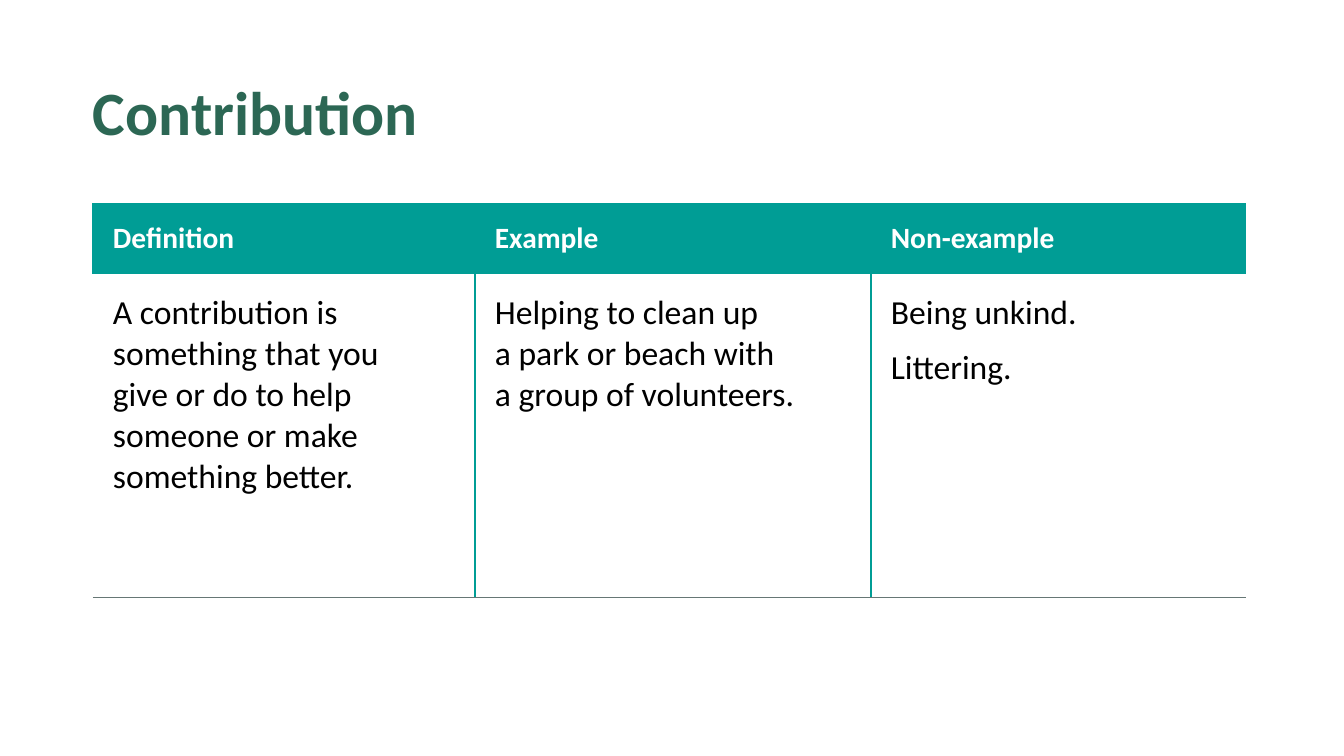
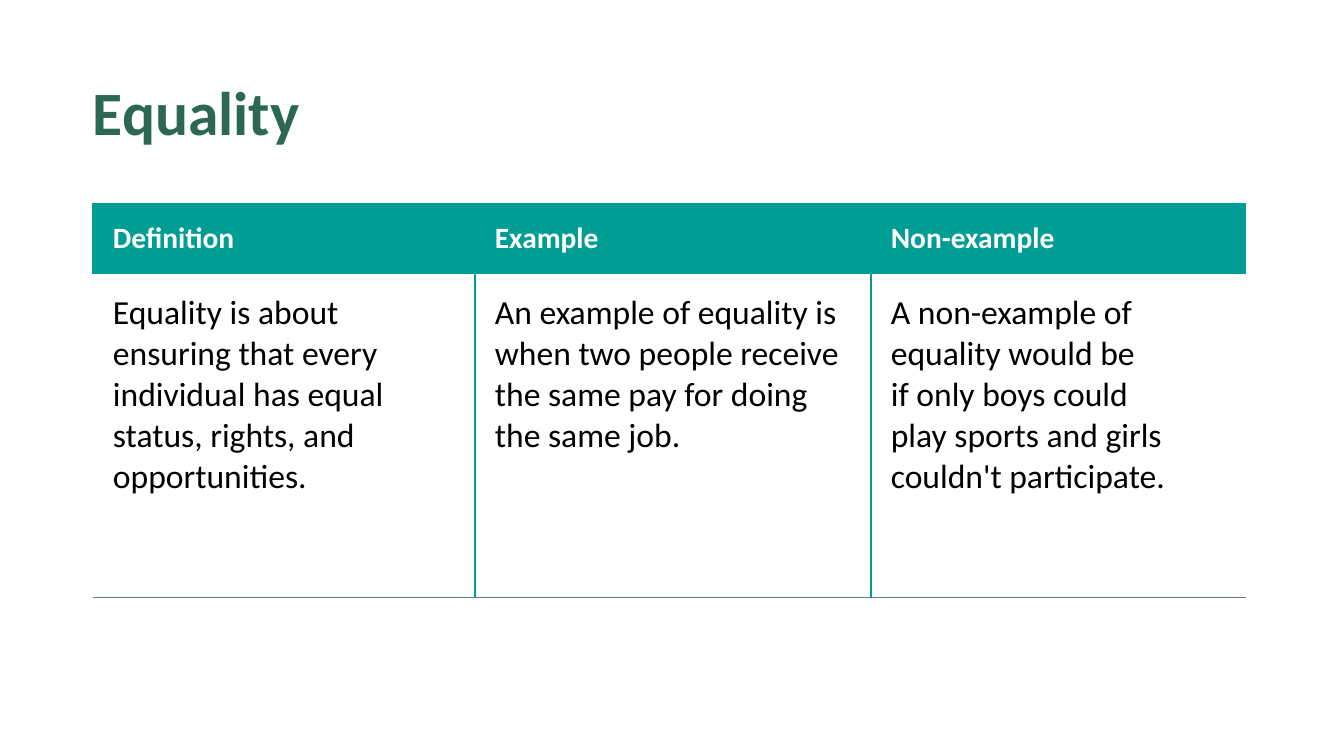
from lxml import etree
from pptx import Presentation
from pptx import util as u
from pptx.dml.color import RGBColor
from pptx.enum import text
from pptx.oxml import ns

PX_PER_INCH = 100.8
FONT = "Calibri"
TEAL = RGBColor(0x00, 0x9D, 0x95)
GREEN = RGBColor(0x2C, 0x67, 0x54)
GREY = RGBColor(0x66, 0x77, 0x75)
WHITE = RGBColor(0xFF, 0xFF, 0xFF)
BLACK = RGBColor(0x00, 0x00, 0x00)
PLAIN_TABLE = "{2D5ABB26-0587-4C30-8999-92F81FD0307C}"

PAGE_SIZE = (1344, 756)
TITLE_BOX = (93, 83, 1137, 65)
TABLE_BOX = (93, 204, 1153, 393)
COLUMNS = (382, 396, 375)
HEADER_HEIGHT = 69
HEADINGS = ("Definition", "Example", "Non-example")

WORDS = {
    "Contribution": (
        ["A contribution is something that you\ngive or do to help someone or make something better."],
        ["Helping to clean up\na park or beach with\na group of volunteers."],
        ["Being unkind.", "Littering."],
    ),
    "Equality": (
        ["Equality is about ensuring that every individual has equal status, rights, and opportunities."],
        ["An example of equality is when two people receive the same pay for doing the same job."],
        ["A non-example of equality would be\nif only boys could\nplay sports and girls couldn't participate."],
    ),
}


def px(length):
    return u.Emu(round(length * 914400 / PX_PER_INCH))


def set_font(para, size, color, bold):
    font = para.font
    font.name, font.size, font.bold = FONT, u.Pt(size), bold
    font.color.rgb = color


def set_margins(target, left, top, right, bottom):
    target.margin_left, target.margin_top = px(left), px(top)
    target.margin_right, target.margin_bottom = px(right), px(bottom)


def set_borders(cell, **colors):
    properties = cell._tc.get_or_add_tcPr()
    for index, side in enumerate("LRTB"):
        color = colors.get(side)
        line = etree.Element(ns.qn(f"a:ln{side}"), w=str(u.Pt(1 if color == TEAL else 0.5)))
        if color is None:
            etree.SubElement(line, ns.qn("a:noFill"))
        else:
            fill = etree.SubElement(line, ns.qn("a:solidFill"))
            etree.SubElement(fill, ns.qn("a:srgbClr"), val=str(color))
        properties.insert(index, line)


def fill_cell(cell, paragraphs, size, color, bold):
    frame = cell.text_frame
    for index, words in enumerate(paragraphs):
        para = frame.add_paragraph() if index else frame.paragraphs[0]
        para.text = words
        para.space_after = u.Pt(0 if bold else 10)
        set_font(para, size, color, bold)


def add_title(page, box, words):
    title = page.shapes.title
    title.left, title.top, title.width, title.height = map(px, box)
    frame = title.text_frame
    frame.word_wrap = True
    frame.auto_size = text.MSO_AUTO_SIZE.NONE
    frame.vertical_anchor = text.MSO_ANCHOR.MIDDLE
    set_margins(frame, 0, 0, 0, 0)
    para = frame.paragraphs[0]
    para.text = words
    para.alignment = text.PP_ALIGN.LEFT
    para.line_spacing = 0.9
    set_font(para, 44, GREEN, True)


def add_word_table(page, box, entries):
    frame = page.shapes.add_table(2, len(HEADINGS), *map(px, box))
    table = frame.table
    table._tbl.tblPr.find(ns.qn("a:tableStyleId")).text = PLAIN_TABLE
    table.horz_banding = False
    for row, height in zip(table.rows, (HEADER_HEIGHT, box[3] - HEADER_HEIGHT)):
        row.height = px(height)
    last = len(HEADINGS) - 1
    for index, (heading, entry, width) in enumerate(zip(HEADINGS, entries, COLUMNS)):
        table.columns[index].width = px(width)
        header, body = table.cell(0, index), table.cell(1, index)

        header.fill.solid()
        header.fill.fore_color.rgb = TEAL
        header.vertical_anchor = text.MSO_ANCHOR.MIDDLE
        set_margins(header, 20, 10, 20, 10)
        set_borders(header, L=TEAL, R=TEAL, T=TEAL, B=TEAL)
        fill_cell(header, [heading], 21, WHITE, True)

        body.fill.background()
        body.vertical_anchor = text.MSO_ANCHOR.TOP
        set_margins(body, 20, 20, 20, 15)
        set_borders(body, L=TEAL if index else None,
                    R=TEAL if index < last else None, T=TEAL, B=GREY)
        fill_cell(body, entry, 24, BLACK, False)


def add_word_slide(deck, word, entries):
    page = deck.slides.add_slide(deck.slide_layouts.get_by_name("Title Only"))
    add_title(page, TITLE_BOX, word)
    add_word_table(page, TABLE_BOX, entries)


def main():
    deck = Presentation()
    deck.slide_width, deck.slide_height = map(px, PAGE_SIZE)
    for word, entries in WORDS.items():
        add_word_slide(deck, word, entries)
    deck.save("out.pptx")


if __name__ == "__main__":
    main()
